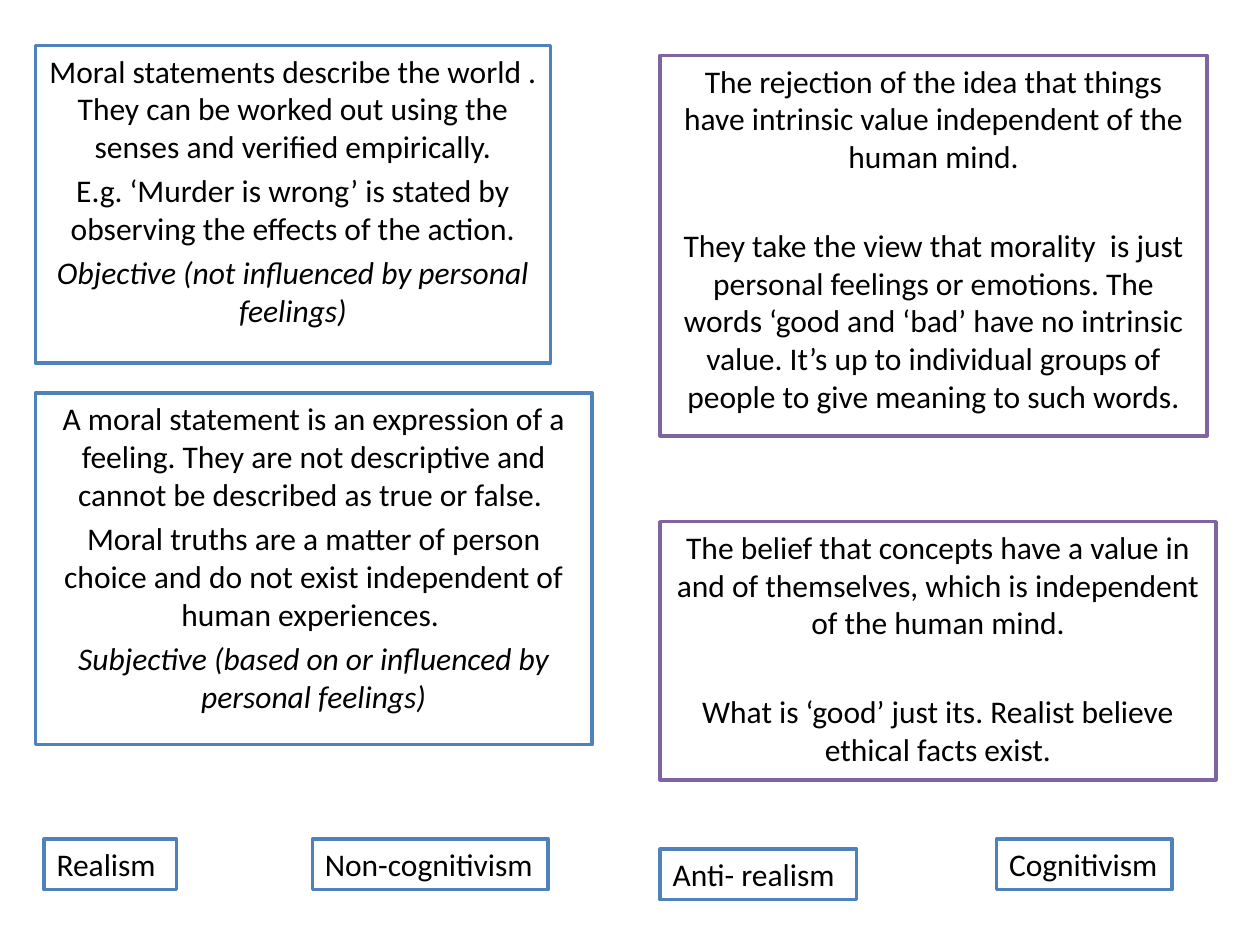
from pptx import Presentation
from pptx.dml.color import RGBColor
from pptx.enum.shapes import MSO_SHAPE
from pptx.enum.text import MSO_ANCHOR, PP_ALIGN
from pptx.util import Inches, Pt

COLORS = {"paper": "FFFFFF", "ink": "000000", "blue": "4F81BD", "purple": "8064A2"}
PARAGRAPH_GAP = 3.6
WIDE_GAP = 29
LABEL_HEIGHT = 0.4
RIGHT_COLUMN = 5.24
LABEL_TOP = 6.66

THEORIES = [
    ((0.28, 0.36, 4.09, 2.52), [
        "Moral statements describe the world . They can be worked out using the "
        "senses and verified empirically.",
        "E.g. ‘Murder is wrong’ is stated by observing the effects of the action.",
        "Objective (not influenced by personal feelings)",
    ]),
    ((0.28, 3.12, 4.42, 2.79), [
        "A moral statement is an expression of a feeling. They are not descriptive "
        "and cannot be described as true or false. ",
        "Moral truths are a matter of person choice and do not exist independent "
        "of human experiences. ",
        "Subjective (based on or influenced by personal feelings)",
    ]),
]

VALUE_VIEWS = [
    ((RIGHT_COLUMN, 0.44, 4.34, 3.02), [
        "The rejection of the idea that things have intrinsic value independent "
        "of the human mind.",
        "They take the view that morality  is just personal feelings or emotions. "
        "The words ‘good and ‘bad’ have no intrinsic value. It’s up to individual "
        "groups of people to give meaning to such words.",
    ]),
    ((RIGHT_COLUMN, 4.14, 4.41, 2.05), [
        "The belief that concepts have a value in and of themselves, which is "
        "independent of the human mind.",
        "What is ‘good’ just its. Realist believe ethical facts exist.",
    ]),
]

TERMS = [
    ("Realism", 0.35, LABEL_TOP, 1.05),
    ("Non-cognitivism", 2.48, LABEL_TOP, 1.87),
    ("Anti- realism ", RIGHT_COLUMN, 6.74, 1.56),
    ("Cognitivism", 7.91, LABEL_TOP, 1.39),
]


def rgb(name):
    """Return the named palette colour."""
    return RGBColor.from_string(COLORS[name])


def add_frame(slide, box, border):
    """Draw an outlined white box and return its text frame."""
    card = slide.shapes.add_shape(MSO_SHAPE.RECTANGLE, *map(Inches, box))
    card.shadow.inherit = False
    card.fill.solid()
    card.fill.fore_color.rgb = rgb("paper")
    card.line.color.rgb = rgb(border)
    card.line.width = Pt(2)
    card.text_frame.vertical_anchor = MSO_ANCHOR.TOP
    return card.text_frame


def write(paragraph, wording, align, italic=None):
    """Add one formatted run to a paragraph."""
    paragraph.alignment = align
    run = paragraph.add_run()
    run.text = wording
    run.font.name = "Calibri"
    run.font.size = Pt(18)
    run.font.italic = italic
    run.font.color.rgb = rgb("ink")


def add_statement(slide, box, sentences, border, gap, italic_ending=False):
    """Place a box of centred sentences, optionally ending in italics."""
    frame = add_frame(slide, box, border)
    frame.word_wrap = True
    for index, sentence in enumerate(sentences):
        paragraph = frame.add_paragraph() if index else frame.paragraphs[0]
        paragraph.space_before = Pt(gap if index else PARAGRAPH_GAP)
        is_ending = italic_ending and index == len(sentences) - 1
        write(paragraph, sentence, PP_ALIGN.CENTER, is_ending or None)


def add_term(slide, term, left, top, width):
    """Place a one-line term to be matched with a statement."""
    frame = add_frame(slide, (left, top, width, LABEL_HEIGHT), "blue")
    frame.word_wrap = False
    write(frame.paragraphs[0], term, PP_ALIGN.LEFT)


def main():
    """Build the matching exercise and save it."""
    deck = Presentation()
    deck.slide_width, deck.slide_height = Inches(10), Inches(7.5)
    slide = deck.slides.add_slide(deck.slide_layouts[6])
    for box, sentences in THEORIES:
        add_statement(slide, box, sentences, "blue", PARAGRAPH_GAP, italic_ending=True)
    for box, sentences in VALUE_VIEWS:
        add_statement(slide, box, sentences, "purple", WIDE_GAP)
    for term in TERMS:
        add_term(slide, *term)
    deck.save("out.pptx")


if __name__ == "__main__":
    main()
